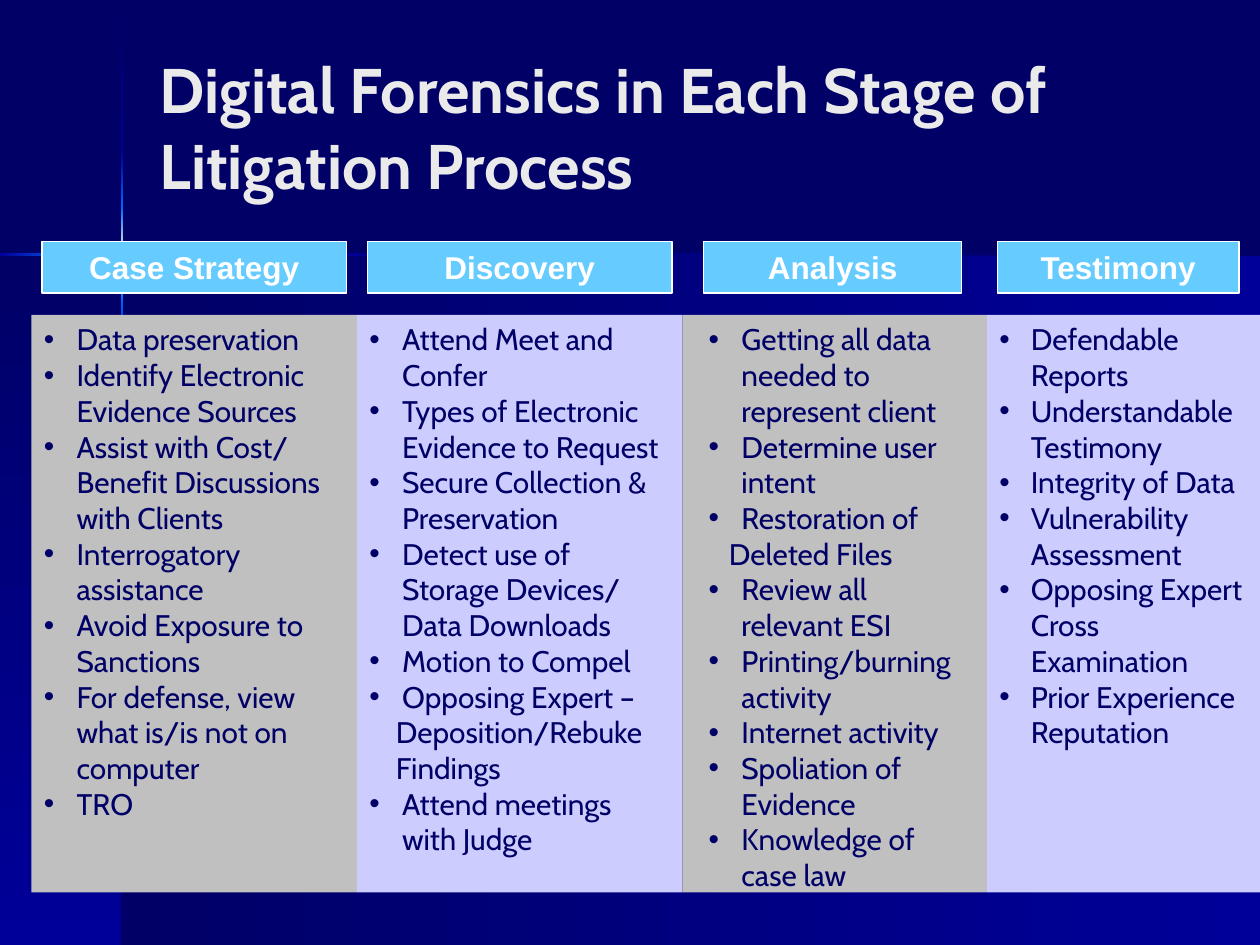
import pptx
import pptx.util
import pptx.enum.shapes
import pptx.enum.text
import pptx.dml.color
from pptx.oxml.ns import qn
import lxml.etree as et

Pt = pptx.util.Pt
Inches = pptx.util.Inches
Align = pptx.enum.text.PP_ALIGN
Anchor = pptx.enum.text.MSO_ANCHOR

HUES = {
    "navy": "000066", "blue": "000099", "glow": "0066FF", "cream": "FFFFCC",
    "pale": "EAEAEA", "lilac": "CCCCFF", "gray": "C0C0C0", "sky": "66CCFF",
    "white": "FFFFFF",
}


def rgb(name):
    return pptx.dml.color.RGBColor.from_string(HUES[name])


class Deck:
    """Holds the style and the slide; lengths are cells of a 120 x 90 grid."""

    cell = 1 / 12
    body = "Cabin"
    head = "Arial"

    def __init__(self):
        self.prs = pptx.Presentation()
        self.prs.slide_width = Inches(10)
        self.prs.slide_height = Inches(7.5)
        self.slide = self.prs.slides.add_slide(self.prs.slide_layouts[5])
        back = self.slide.background.fill
        back.solid()
        back.fore_color.rgb = rgb("navy")

    def span(self, *cells):
        return [Inches(n * self.cell) for n in cells]

    def font(self, para, face, size, hue, bold=False):
        for run in para.runs:
            run.font.name = face
            run.font.size = Pt(size)
            run.font.bold = bold
            run.font.color.rgb = rgb(hue)

    def title(self, text, *box):
        shape = self.slide.shapes.title
        shape.left, shape.top, shape.width, shape.height = self.span(*box)
        frame = shape.text_frame
        frame.text = text
        frame.auto_size = pptx.enum.text.MSO_AUTO_SIZE.NONE
        frame.vertical_anchor = Anchor.MIDDLE
        frame.paragraphs[0].alignment = Align.LEFT
        self.font(frame.paragraphs[0], self.body, 36, "pale", True)

    def rect(self, box, hue=None):
        kind = pptx.enum.shapes.MSO_SHAPE.RECTANGLE
        shape = self.slide.shapes.add_shape(kind, *self.span(*box))
        shape.shadow.inherit = False
        shape.line.fill.background()
        if hue:
            shape.fill.solid()
            shape.fill.fore_color.rgb = rgb(hue)
        return shape

    def blend(self, box, hues, down):
        shape = self.rect(box)
        shape.fill.gradient()
        shape.fill.gradient_angle = 270 if down else 0
        stops = shape._element.spPr.find(qn("a:gradFill")).find(qn("a:gsLst"))
        for old in list(stops):
            stops.remove(old)
        for i, hue in enumerate(hues):
            pos = str(100000 * i // (len(hues) - 1))
            stop = et.SubElement(stops, qn("a:gs"), pos=pos)
            et.SubElement(stop, qn("a:srgbClr"), val=HUES[hue])

    def label(self, text, *box):
        shape = self.rect(box, "sky")
        shape.line.color.rgb = rgb("white")
        shape.line.width = Pt(0.75)
        frame = shape.text_frame
        frame.text = text
        frame.vertical_anchor = Anchor.MIDDLE
        frame.paragraphs[0].alignment = Align.CENTER
        self.font(frame.paragraphs[0], self.head, 18, "white", True)

    def indent(self, para, left, hang=0):
        props = para._p.get_or_add_pPr()
        props.set("marL", str(Inches(left)))
        props.set("indent", str(-Inches(hang)))
        if hang:
            et.SubElement(props, qn("a:buFont"), typeface="Arial")
            et.SubElement(props, qn("a:buChar"), char="•")
        else:
            et.SubElement(props, qn("a:buNone"))

    def panel(self, items, hue, left, hang, plain, *box):
        """Lines named in plain carry no bullet and sit at their own indent."""
        frame = self.rect(box, hue).text_frame
        frame.word_wrap = True
        frame.vertical_anchor = Anchor.TOP
        frame.text = "\n".join(items)
        for para in frame.paragraphs:
            para.alignment = Align.LEFT
            if para.text in plain:
                self.indent(para, plain[para.text])
            else:
                self.indent(para, left, hang)
            self.font(para, self.body, 17, "navy")


# Backdrop: box, colours, runs downward
ART = [
    ((11.64, 24.24, 108.36, 65.76), ("navy", "blue"), False),
    ((0, 24.24, 11.64, 65.76), ("navy", "blue"), True),
    ((11.52, 0.12, 0.24, 14.4), ("navy", "blue"), True),
    ((11.52, 33.84, 0.24, 56.16), ("blue", "navy"), True),
    ((21.24, 24.12, 98.76, 0.24), ("blue", "navy"), False),
    ((11.52, 28.56, 0.24, 5.28), ("glow", "blue"), True),
    ((11.52, 14.52, 0.24, 5.28), ("blue", "glow"), True),
    ((11.52, 19.8, 0.24, 8.76), ("glow", "cream", "glow"), True),
    ((0, 24.12, 7.32, 0.24), ("blue", "glow"), False),
]

# Stages: name, label (column, width), panel (column, width), indent, hang,
# lines without bullet, items
STAGES = [
    ("Case Strategy", (4, 29), (3, 31), 0.26, 0.26, {}, [
        "Data preservation",
        "Identify Electronic Evidence Sources",
        "Assist with Cost/ Benefit Discussions with Clients",
        "Interrogatory assistance",
        "Avoid Exposure to Sanctions",
        "For defense, view what is/is not on computer",
        "TRO"]),
    ("Discovery", (35, 29), (34, 31), 0.26, 0.26,
     {"Deposition/Rebuke": 0.21, "Findings": 0.21}, [
        "Attend Meet and Confer",
        "Types of Electronic Evidence to Request",
        "Secure Collection & Preservation",
        "Detect use of Storage Devices/ Data Downloads",
        "Motion to Compel",
        "Opposing Expert –",
        "Deposition/Rebuke",
        "Findings",
        "Attend meetings with Judge"]),
    ("Analysis", (67, 24.6), (65, 29), 0.37, 0.26, {"Deleted Files": 0.27}, [
        "Getting all data needed to represent client",
        "Determine user intent",
        "Restoration of",
        "Deleted Files",
        "Review all relevant ESI",
        "Printing/burning activity",
        "Internet activity",
        "Spoliation of Evidence",
        "Knowledge of case law"]),
    ("Testimony", (95, 23), (94, 26), 0.25, 0.25, {}, [
        "Defendable Reports",
        "Understandable Testimony",
        "Integrity of Data",
        "Vulnerability Assessment",
        "Opposing Expert Cross Examination",
        "Prior Experience Reputation"]),
]


def main():
    deck = Deck()
    for box, hues, down in ART:
        deck.blend(box, hues, down)
    deck.title("Digital Forensics in Each Stage of Litigation Process",
               14, 4, 99, 16)

    # Panels with their labels above
    for i, (name, tab, col, left, hang, plain, items) in enumerate(STAGES):
        hue = ("gray", "lilac")[i % 2]
        deck.panel(items, hue, left, hang, plain, col[0], 30, col[1], 55)
        deck.label(name, tab[0], 23, tab[1], 4.92)

    deck.prs.save("out.pptx")


if __name__ == "__main__":
    main()
